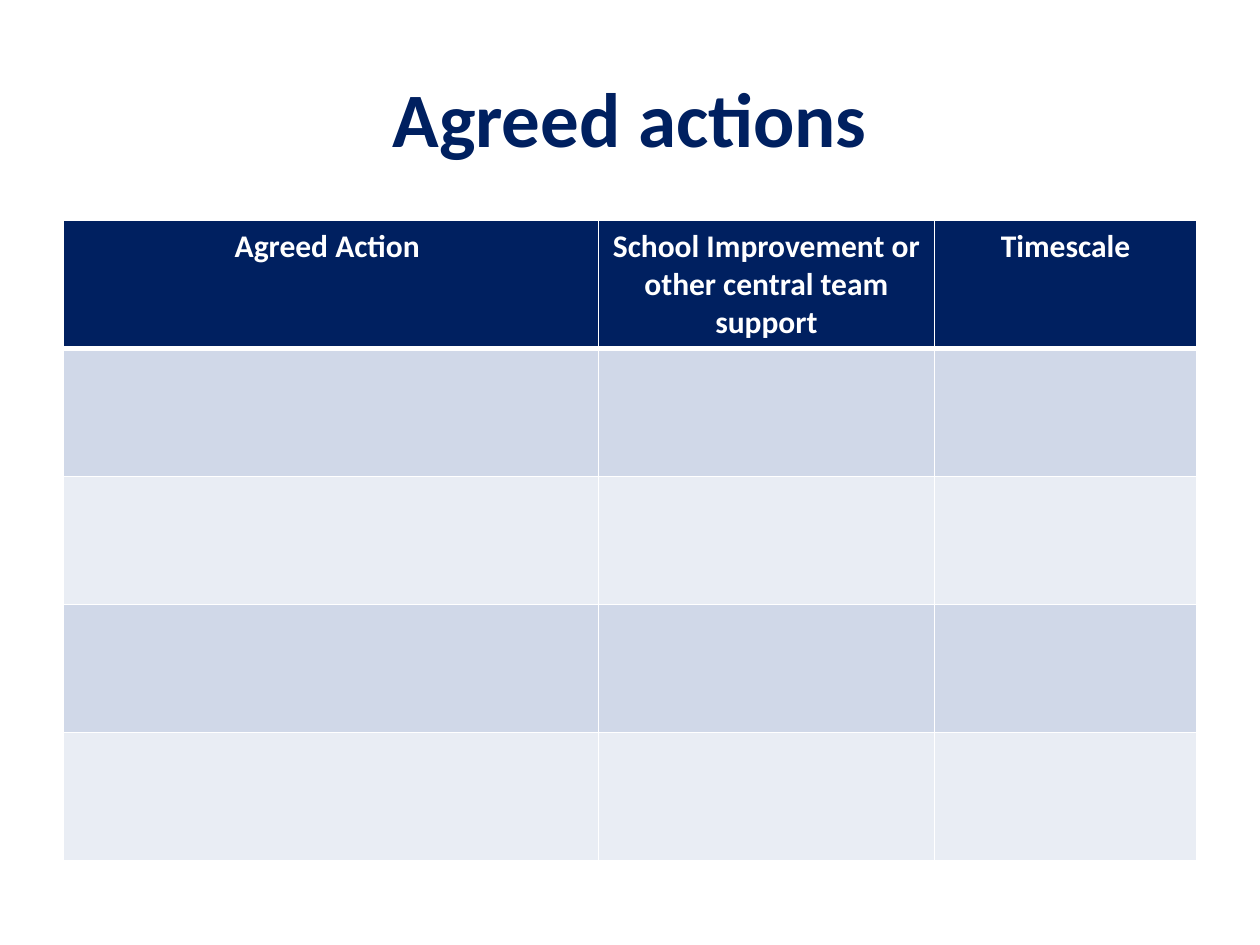
from lxml import etree
from pptx import Presentation
from pptx.dml.color import RGBColor
from pptx.enum.text import MSO_ANCHOR, PP_ALIGN
from pptx.oxml.ns import qn
from pptx.util import Cm, Pt

CENTER = PP_ALIGN.CENTER
MIDDLE = MSO_ANCHOR.MIDDLE

NAVY = RGBColor(0x00, 0x20, 0x60)
WHITE = RGBColor(0xFF, 0xFF, 0xFF)
BAND_DARK = RGBColor(0xD0, 0xD8, 0xE8)
BAND_LIGHT = RGBColor(0xE9, 0xED, 0xF4)

HEADERS = [
    ["Agreed Action "],
    ["School Improvement or ", "other central team support"],
    ["Timescale"],
]
COLUMN_WIDTHS = [10.78, 6.78, 5.28]
ROW_HEIGHT = 2.58
ROW_COUNT = 5


class SlideBuilder:
    """Holds the text style and the current slide."""

    font_format = {"name": "Calibri", "bold": True}

    def __init__(self, slide):
        self.slide = slide

    def add_lines(self, text_frame, lines, size, color):
        for index, line in enumerate(lines):
            paragraph = text_frame.paragraphs[0] if index == 0 else text_frame.add_paragraph()
            paragraph.alignment = CENTER
            run = paragraph.add_run()
            run.text = line
            for name, value in {**self.font_format, "size": Pt(size)}.items():
                setattr(run.font, name, value)
            run.font.color.rgb = color

    def title(self, text, left, top, width, height):
        shape = self.slide.shapes.add_textbox(Cm(left), Cm(top), Cm(width), Cm(height))
        text_frame = shape.text_frame
        for name, value in {"word_wrap": True, "vertical_anchor": MIDDLE}.items():
            setattr(text_frame, name, value)
        self.add_lines(text_frame, [text], 44, NAVY)

    def borders(self, cell, widths):
        properties = cell._tc.get_or_add_tcPr()
        for side, width in widths.items():
            line = etree.SubElement(properties, qn(f"a:ln{side}"), w=str(Pt(width)))
            fill = etree.SubElement(line, qn("a:solidFill"))
            etree.SubElement(fill, qn("a:srgbClr"), val=str(WHITE))

    def table(self, headers, left, top):
        shape = self.slide.shapes.add_table(
            ROW_COUNT, len(headers), Cm(left), Cm(top),
            Cm(sum(COLUMN_WIDTHS)), Cm(ROW_HEIGHT * ROW_COUNT))
        table = shape.table
        for column, width in zip(table.columns, COLUMN_WIDTHS):
            column.width = Cm(width)

        # Header fill, then alternating bands, with a thick rule below the header
        for row_index, row in enumerate(table.rows):
            row.height = Cm(ROW_HEIGHT)
            band = BAND_DARK if row_index % 2 else BAND_LIGHT
            widths = {"L": 1, "R": 1,
                      "T": 3 if row_index == 1 else 1,
                      "B": 3 if row_index == 0 else 1}
            for cell in row.cells:
                self.borders(cell, widths)
                cell.fill.solid()
                cell.fill.fore_color.rgb = band if row_index else NAVY

        for cell, lines in zip(table.rows[0].cells, headers):
            self.add_lines(cell.text_frame, lines, 18, WHITE)


def main():
    presentation = Presentation()
    presentation.slide_width = Cm(25.4)
    presentation.slide_height = Cm(19.05)
    builder = SlideBuilder(presentation.slides.add_slide(presentation.slide_layouts[6]))

    # Heading
    builder.title("Agreed actions", 1.27, 0.76, 22.86, 3.18)

    # Empty action plan
    builder.table(HEADERS, 1.28, 4.45)

    presentation.save("out.pptx")


if __name__ == "__main__":
    main()
